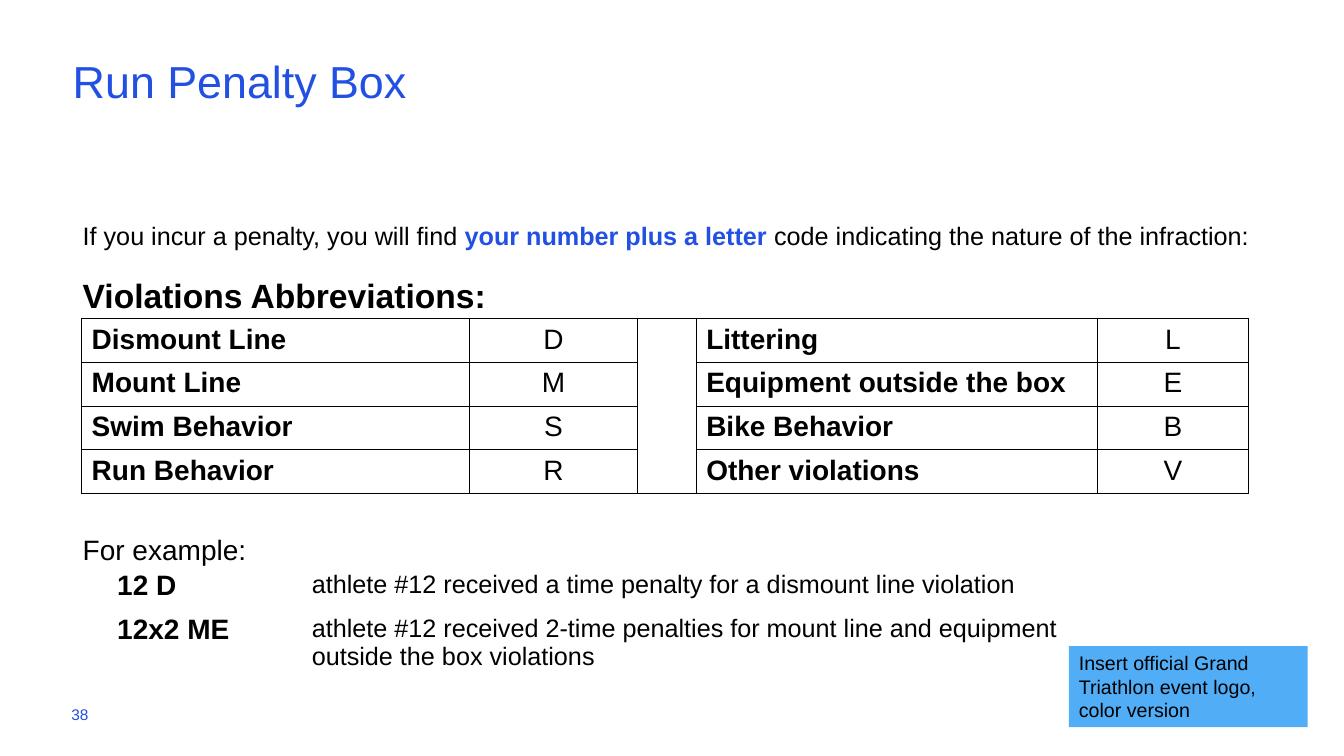
from pptx import Presentation
from pptx.dml.color import RGBColor
from pptx.enum.shapes import MSO_SHAPE
from pptx.enum.text import MSO_ANCHOR, PP_ALIGN
from pptx.oxml import parse_xml
from pptx.oxml.ns import nsdecls
from pptx.util import Pt

COLORS = {"blue": "2150E2", "sky": "51ADF5", "black": "000000"}
FONT = "Arial"
VIOLATIONS = [
    ("Dismount Line", "D", "", "Littering", "L"),
    ("Mount Line", "M", "", "Equipment outside the box", "E"),
    ("Swim Behavior", "S", "", "Bike Behavior", "B"),
    ("Run Behavior", "R", "", "Other violations", "V"),
]
EXAMPLES = [
    ("12 D", "athlete #12 received a time penalty for a dismount line violation"),
    ("12x2 ME", "athlete #12 received 2-time penalties for mount line and equipment \n"
                "outside the box violations"),
]


def color(name):
    return RGBColor.from_string(COLORS[name])


def write(para, text, size=18, tint="black", bold=False):
    for index, line in enumerate(text.split("\n")):
        if index:
            para.add_line_break()
        span = para.add_run()
        span.text = line
        span.font.name = FONT
        span.font.size = Pt(size)
        span.font.bold = bold
        span.font.color.rgb = color(tint)


def set_frame(box, left_inset=7.2, anchor=MSO_ANCHOR.TOP):
    frame = box.text_frame
    frame.word_wrap = True
    frame.vertical_anchor = anchor
    frame.margin_left, frame.margin_right = Pt(left_inset), Pt(7.2)
    frame.margin_top = frame.margin_bottom = Pt(3.6)
    return frame


def add_text(page, left, top, width, height, **layout):
    box = page.shapes.add_textbox(Pt(left), Pt(top), Pt(width), Pt(height))
    return set_frame(box, **layout)


def add_label(page, left, top, width, height, text, size):
    frame = add_text(page, left, top, width, height, left_inset=0, anchor=MSO_ANCHOR.MIDDLE)
    write(frame.paragraphs[0], text, size=size, tint="blue")
    return frame.paragraphs[0]


def add_intro(page, left, top, width, height):
    frame = add_text(page, left, top, width, height)
    para = frame.paragraphs[0]
    para.line_spacing = 1.4
    write(para, "If you incur a penalty, you will find ")
    write(para, "your number plus a letter ", tint="blue", bold=True)
    write(para, "code indicating the nature of the infraction:")
    heading = frame.add_paragraph()
    heading.line_spacing = 1.4
    heading.space_before = Pt(6)
    write(heading, "Violations Abbreviations:", size=24, bold=True)


def set_borders(cell, line):
    properties = cell._tc.get_or_add_tcPr()
    paint = "<a:noFill/>"
    if line:
        paint = f'<a:solidFill><a:srgbClr val="{COLORS[line]}"/></a:solidFill>'
    for index, side in enumerate(("lnL", "lnR", "lnT", "lnB")):
        border = parse_xml(f'<a:{side} {nsdecls("a")} w="12700">{paint}</a:{side}>')
        properties.insert(index, border)


def add_grid(page, left, top, widths, row_height, rows, formats, line=None):
    table = page.shapes.add_table(
        len(rows), len(widths), Pt(left), Pt(top),
        Pt(sum(widths)), Pt(row_height * len(rows))).table
    table.first_row = table.horz_banding = False
    for column, width in zip(table.columns, widths):
        column.width = Pt(width)
    for row_index, values in enumerate(rows):
        table.rows[row_index].height = Pt(row_height)
        for column_index, text in enumerate(values):
            cell = table.cell(row_index, column_index)
            cell.fill.background()
            set_borders(cell, line)
            size, bold, align = formats[column_index]
            para = cell.text_frame.paragraphs[0]
            para.alignment = align
            if text:
                write(para, text, size=size, bold=bold)
    return table


def add_violations(page, left, top):
    name, code = (20, True, PP_ALIGN.LEFT), (20, False, PP_ALIGN.CENTER)
    table = add_grid(page, left, top, [277.2, 119.8, 42, 286.6, 108], 31.2,
                     VIOLATIONS, [name, code, code, name, code], line="black")
    table.cell(0, 2).merge(table.cell(len(VIOLATIONS) - 1, 2))


def add_examples(page, left, top):
    frame = add_text(page, left, top, 300, 39)
    frame.paragraphs[0].line_spacing = 1.4
    write(frame.paragraphs[0], "For example:", size=20)
    add_grid(page, left + 24.5, top + 37, [139, 669], 31.2, EXAMPLES,
             [(20, True, PP_ALIGN.LEFT), (18, False, PP_ALIGN.LEFT)])


def add_logo_note(page, left, top, width, height):
    box = page.shapes.add_shape(MSO_SHAPE.RECTANGLE, Pt(left), Pt(top), Pt(width), Pt(height))
    box.shadow.inherit = False
    box.fill.solid()
    box.fill.fore_color.rgb = color("sky")
    box.line.fill.background()
    frame = set_frame(box)
    lines = ("Insert official Grand Triathlon event logo,", "color version")
    for index, text in enumerate(lines):
        para = frame.add_paragraph() if index else frame.paragraphs[0]
        para.alignment = PP_ALIGN.LEFT
        write(para, text, size=14)


def build_penalty_page(deck):
    page = deck.slides.add_slide(deck.slide_layouts[6])
    title = add_label(page, 52, 19, 828, 82, "Run Penalty Box", size=32)
    title.line_spacing = 0.9
    add_intro(page, 52, 145, 871, 82)
    add_label(page, 51, 495.5, 216, 29, "38", size=11)
    add_logo_note(page, 763.5, 461.5, 170.5, 58)
    add_examples(page, 52, 367)
    add_violations(page, 58.3, 227.6)


def main():
    deck = Presentation()
    deck.slide_width, deck.slide_height = Pt(960), Pt(540)
    build_penalty_page(deck)
    deck.save("out.pptx")


if __name__ == "__main__":
    main()
